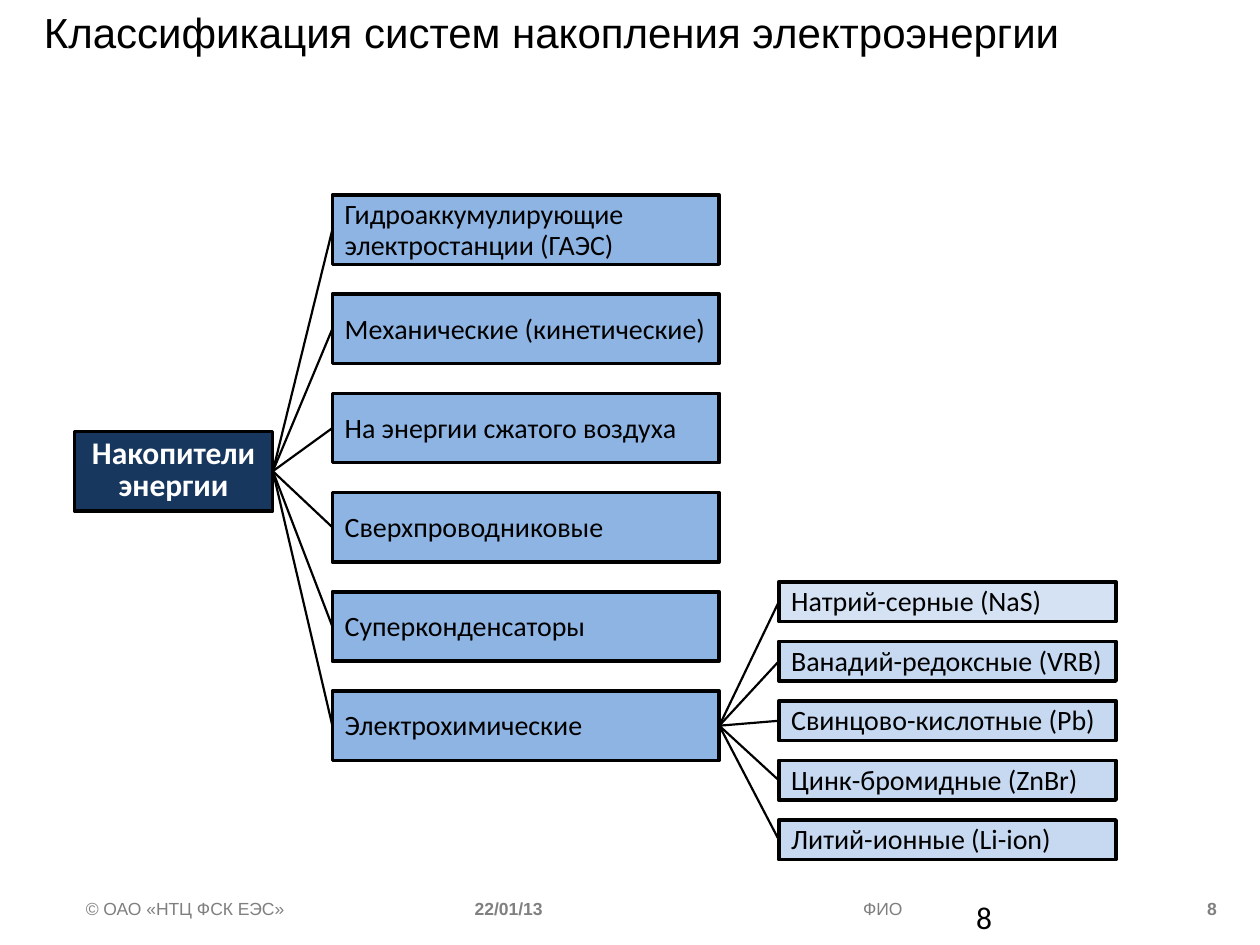
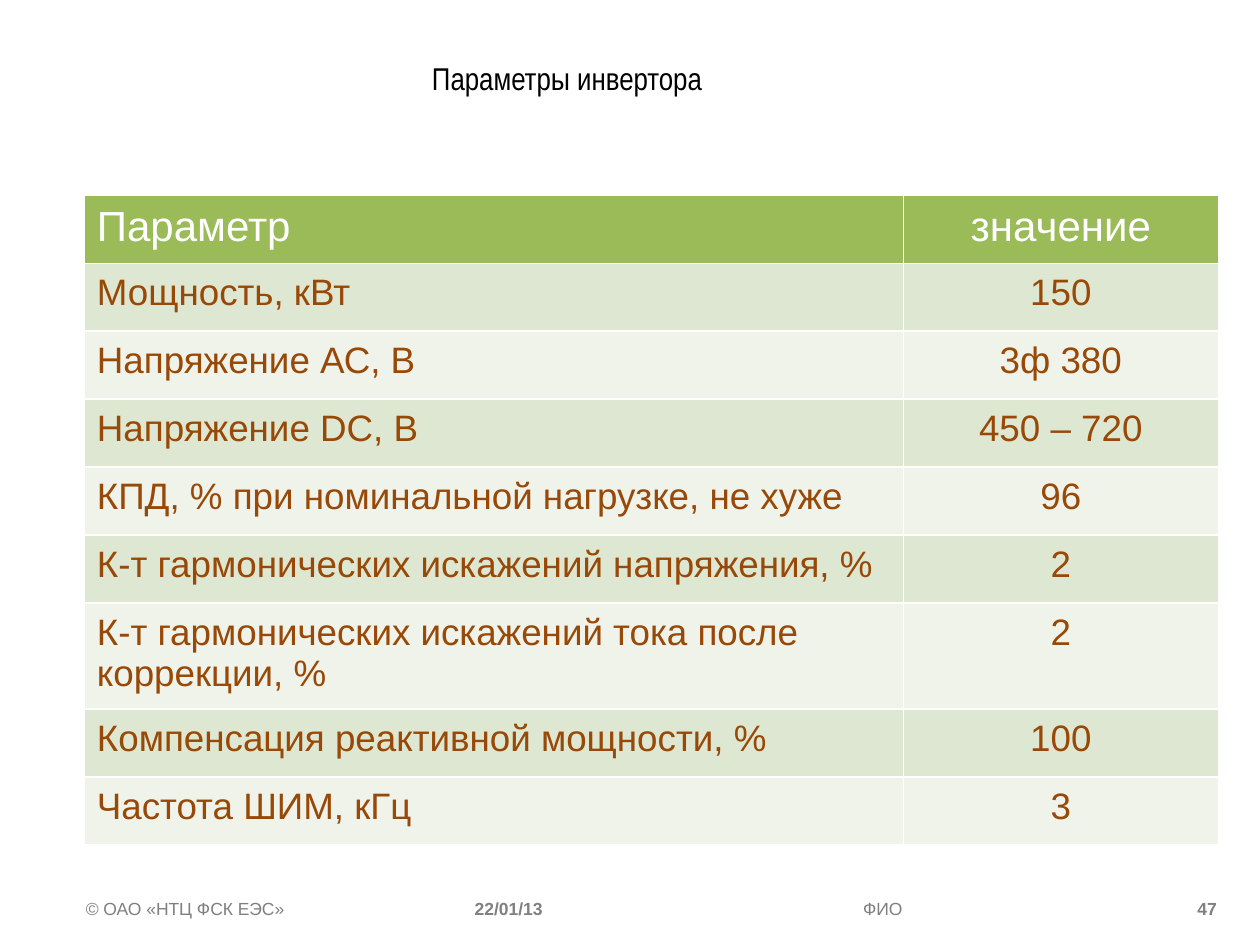
from lxml import etree
from pptx import Presentation
from pptx.dml.color import RGBColor
from pptx.enum.shapes import MSO_CONNECTOR, MSO_SHAPE
from pptx.enum.text import MSO_ANCHOR, PP_ALIGN
from pptx.oxml.ns import qn
from pptx.util import Cm, Pt

LEFT, CENTER, RIGHT = PP_ALIGN.LEFT, PP_ALIGN.CENTER, PP_ALIGN.RIGHT
TOP, MIDDLE = MSO_ANCHOR.TOP, MSO_ANCHOR.MIDDLE
RECTANGLE, STRAIGHT = MSO_SHAPE.RECTANGLE, MSO_CONNECTOR.STRAIGHT
TITLE_ONLY = 5
LEFT_SITE, RIGHT_SITE = 1, 3
COLORS = {
    "black": "000000",
    "white": "FFFFFF",
    "root": "17375E",
    "kind": "8EB4E3",
    "battery": "C6D9F1",
    "first_battery": "D4E2F4",
    "footer": "7F7F7F",
    "footer_bold": "808080",
    "header": "9BBB59",
    "odd_row": "DEE7D1",
    "even_row": "EFF3EA",
    "cell_text": "984807",
}

STORAGE_KINDS = [
    "Гидроаккумулирующие электростанции (ГАЭС)",
    "Механические (кинетические)",
    "На энергии сжатого воздуха",
    "Сверхпроводниковые",
    "Суперконденсаторы",
    "Электрохимические",
]
BATTERIES = [
    "Натрий-серные (NaS)",
    "Ванадий-редоксные (VRB)",
    "Свинцово-кислотные (Pb)",
    "Цинк-бромидные (ZnBr)",
    "Литий-ионные (Li-ion)",
]
INVERTER = [
    ("Параметр", "значение"),
    ("Мощность, кВт", "150"),
    ("Напряжение АС, В", "3ф 380"),
    ("Напряжение DC, В", "450 – 720"),
    ("КПД, % при номинальной нагрузке, не хуже", "96"),
    ("К-т гармонических искажений напряжения, %", "2"),
    ("К-т гармонических искажений тока после коррекции, %", "2"),
    ("Компенсация реактивной мощности, %", "100"),
    ("Частота ШИМ, кГц", "3"),
]


def rgb(color):
    """Return the named colour."""
    return RGBColor.from_string(COLORS[color])


def write(frame, text, size, color, font="Arial", align=LEFT, bold=False):
    """Put one formatted paragraph in a text frame."""
    frame.text = text
    frame.word_wrap = True
    paragraph = frame.paragraphs[0]
    paragraph.alignment = align
    run_font = paragraph.runs[0].font
    run_font.name, run_font.size, run_font.bold = font, Pt(size), bold
    run_font.color.rgb = rgb(color)
    return paragraph


def add_label(slide, box, text, size, color, **style):
    """Add a text box in the given box of centimetres."""
    label = slide.shapes.add_textbox(*map(Cm, box))
    write(label.text_frame, text, size, color, **style)


def add_footer(slide, box, number):
    """Add the copyright, date, author and slide number along a band."""
    left, top, width, height = box
    date_width = 2.77
    add_label(slide, (left, top, 6.35, height), "© ОАО «НТЦ ФСК ЕЭС»", 10, "footer")
    add_label(slide, (left + 7.84, top, date_width, height), "22/01/13", 10,
              "footer_bold", bold=True)
    add_label(slide, (left + 15.67, top, 4.5, height), "ФИО", 10, "footer")
    add_label(slide, (left + width - date_width, top, date_width, height), number, 10,
              "footer_bold", align=RIGHT, bold=True)


def add_slide(deck, title, box, number, size, **style):
    """Add a slide with its title and footer."""
    slide = deck.slides.add_slide(deck.slide_layouts[TITLE_ONLY])
    heading = slide.shapes.title
    heading.left, heading.top, heading.width, heading.height = map(Cm, box)
    heading.text_frame.vertical_anchor = TOP
    write(heading.text_frame, title, size, "black", **style)
    add_footer(slide, (1.48, 17.98, 23.3, 1.07), number)
    return slide


def add_node(slide, box, text, fill, size=16, color="black", align=LEFT, bold=False):
    """Add one outlined box of the classification."""
    node = slide.shapes.add_shape(RECTANGLE, *map(Cm, box))
    node.shadow.inherit = False
    node.fill.solid()
    node.fill.fore_color.rgb = rgb(fill)
    node.line.color.rgb = rgb("black")
    node.line.width = Pt(2)
    frame = node.text_frame
    frame.vertical_anchor = MIDDLE
    if align == LEFT:
        frame.margin_right = Cm(0.1)
    paragraph = write(frame, text, size, color, "Calibri", align, bold)
    paragraph.line_spacing = Pt(18)
    return node


def add_column(slide, box, pitch, texts, fills):
    """Stack equal nodes downwards from the first box."""
    left, top, width, height = box
    return [add_node(slide, (left, top + row * pitch, width, height), text, fill)
            for row, (text, fill) in enumerate(zip(texts, fills))]


def add_branches(slide, parent, children):
    """Join a parent to each of its children."""
    for child in children:
        branch = slide.shapes.add_connector(STRAIGHT, 0, 0, 0, 0)
        branch.begin_connect(parent, RIGHT_SITE)
        branch.end_connect(child, LEFT_SITE)
        branch.line.color.rgb = rgb("black")
        branch.line.width = Pt(1.25)
        etree.SubElement(branch._element.spPr, qn("a:effectLst"))


def add_classification(slide, left, top):
    """Draw the tree of energy storage from its top left corner."""
    root = add_node(slide, (left, top + 4.77, 4, 1.6), "Накопители энергии", "root",
                    18, "white", CENTER, True)
    kinds = add_column(slide, (left + 5.2, top, 7.8, 1.4), 2,
                       STORAGE_KINDS, ["kind"] * len(STORAGE_KINDS))
    batteries = add_column(slide, (left + 14.2, top + 7.8, 6.8, 0.8), 1.2, BATTERIES,
                           ["first_battery"] + ["battery"] * (len(BATTERIES) - 1))
    add_branches(slide, root, kinds)
    add_branches(slide, kinds[-1], batteries)


def add_borders(cell):
    """Draw thin white lines round a cell."""
    properties = cell._tc.get_or_add_tcPr()
    for index, side in enumerate(("lnL", "lnR", "lnT", "lnB")):
        border = etree.Element(qn(f"a:{side}"), w=str(Pt(1)))
        fill = etree.SubElement(border, qn("a:solidFill"))
        etree.SubElement(fill, qn("a:srgbClr"), val=COLORS["white"])
        properties.insert(index, border)


def add_parameters(slide, box):
    """Add the table of inverter parameters."""
    left, top, width, row_height = box
    rows = len(INVERTER)
    table = slide.shapes.add_table(rows, 2, Cm(left), Cm(top), Cm(width),
                                   Cm(row_height * rows)).table
    value_width = 6.35
    table.columns[0].width = Cm(width - value_width)
    table.columns[1].width = Cm(value_width)
    for row, texts in enumerate(INVERTER):
        table.rows[row].height = Cm(row_height)
        size, color = (21, "cell_text") if row else (24, "white")
        fill = ("odd_row" if row % 2 else "even_row") if row else "header"
        for cell, text, align in zip(table.rows[row].cells, texts, (LEFT, CENTER)):
            cell.margin_top = cell.margin_bottom = Cm(0.18)
            cell.fill.solid()
            cell.fill.fore_color.rgb = rgb(fill)
            add_borders(cell)
            write(cell.text_frame, text, size, color, align=align)


def build_storage_slide(deck):
    """Build the classification slide."""
    slide = add_slide(deck, "Классификация систем накопления электроэнергии",
                      (0, 0, 22.3, 3.12), "8", 24, align=RIGHT)
    slide.shapes.title.text_frame.margin_right = Cm(0.94)
    add_label(slide, (19.43, 17.98, 5.92, 1.02), "8", 18, "black", font="Calibri")
    add_classification(slide, 1.5, 3.93)


def build_inverter_slide(deck):
    """Build the inverter slide."""
    slide = add_slide(deck, "Параметры инвертора", (0, 1.07, 22.86, 2.13), "47", 18,
                      font="Arial Narrow", align=CENTER)
    add_parameters(slide, (1.7, 3.93, 22.86, 1.37))


def main():
    """Build and save the deck."""
    deck = Presentation()
    deck.slide_width, deck.slide_height = Cm(25.4), Cm(19.05)
    build_storage_slide(deck)
    build_inverter_slide(deck)
    deck.save("out.pptx")


if __name__ == "__main__":
    main()
